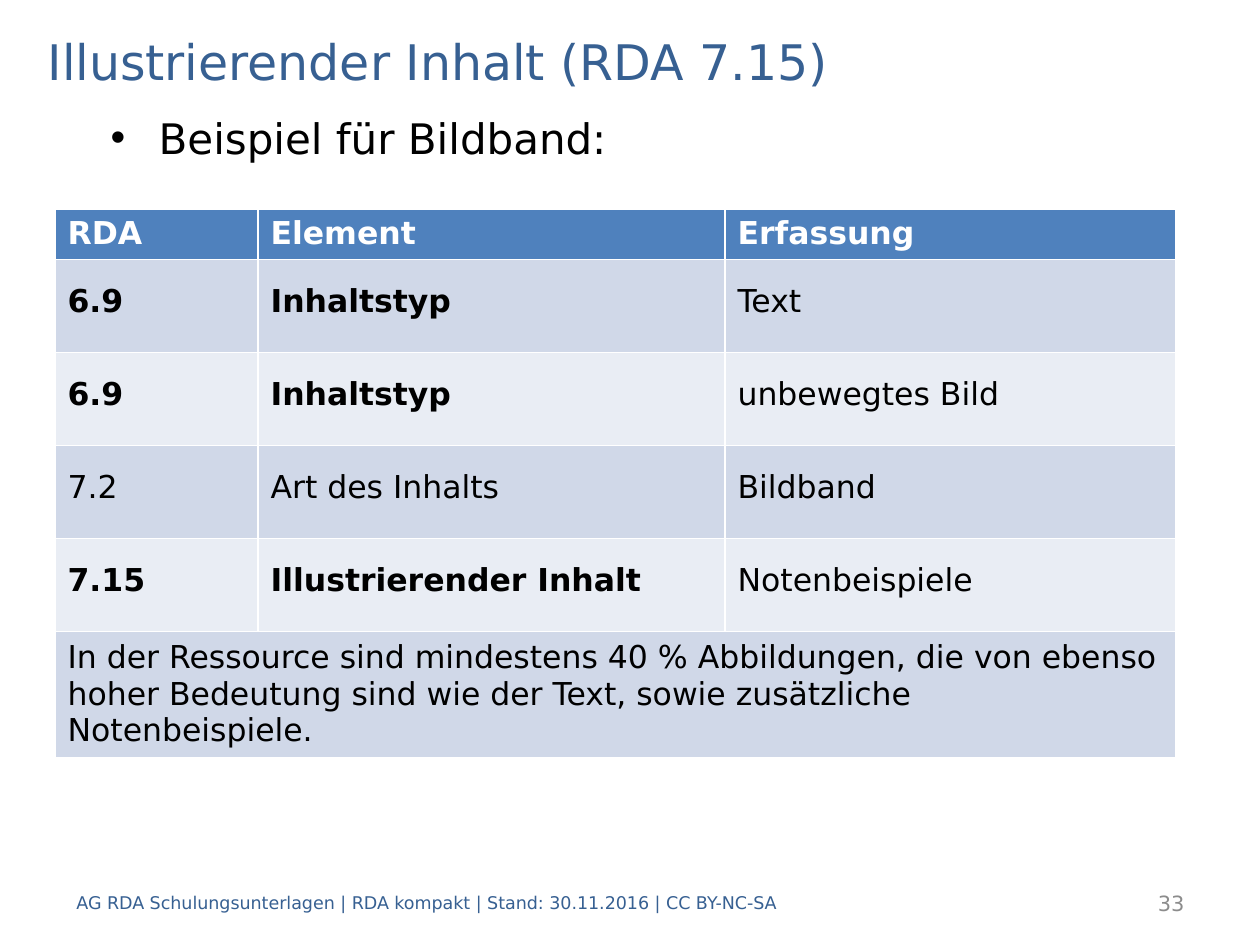
from lxml import etree
from pptx import Presentation
from pptx import util as u
from pptx.dml.color import RGBColor
from pptx.enum import text
from pptx.oxml import ns

PX = 914400 / 126
FONT = "DejaVu Sans"
COLORS = {
    "heading": "376092",
    "text": "000000",
    "number": "8C8C8C",
    "header_text": "FFFFFF",
    "header": "4F81BD",
    "odd_row": "D0D8E8",
    "even_row": "E9EDF4",
}
COLUMN_WIDTHS = [203, 467, 451]
ROW_HEIGHTS = [49, 93, 93, 93, 93, 122]
HEADER = ["RDA", "Element", "Erfassung"]
ENTRIES = [  # number, element, value, core element
    ("6.9", "Inhaltstyp", "Text", True),
    ("6.9", "Inhaltstyp", "unbewegtes Bild", True),
    ("7.2", "Art des Inhalts", "Bildband", False),
    ("7.15", "Illustrierender Inhalt", "Notenbeispiele", True),
]
REMARK = (
    "In der Ressource sind mindestens 40 % Abbildungen, die von ebenso "
    "hoher Bedeutung sind wie der Text, sowie zusätzliche Notenbeispiele."
)


def px(length):
    return u.Emu(round(length * PX))


def place(shape, left, top, width, height):
    shape.left, shape.top = px(left), px(top)
    shape.width, shape.height = px(width), px(height)


def write(frame, content, size, color, bold=False, align=text.PP_ALIGN.LEFT):
    """Set one formatted paragraph and return it."""
    frame.text = content
    paragraph = frame.paragraphs[0]
    paragraph.alignment = align
    font = paragraph.runs[0].font
    font.name, font.size, font.bold = FONT, u.Pt(size), bold
    font.color.rgb = RGBColor.from_string(COLORS[color])
    return paragraph


def add_title(slide, content):
    title = slide.shapes.title
    place(title, 35, 25, 1191, 71)
    title.text_frame.vertical_anchor = text.MSO_ANCHOR.MIDDLE
    write(title.text_frame, content, 28, "heading")


def add_bullet(slide, content):
    body = slide.placeholders[1]
    place(body, 35, 106, 769, 63)
    body.text_frame.auto_size = text.MSO_AUTO_SIZE.SHAPE_TO_FIT_TEXT
    paragraph = write(body.text_frame, content, 24, "text")
    paragraph.level = 1
    paragraph.space_before = u.Pt(0)
    properties = paragraph._p.get_or_add_pPr()
    properties.set("marL", str(px(111)))
    properties.set("indent", str(px(-48)))
    for tag, name, value in (("a:buFont", "typeface", "Arial"), ("a:buChar", "char", "•")):
        etree.SubElement(properties, ns.qn(tag)).set(name, value)


def fill_cell(cell, content, fill, color="text", bold=False):
    cell.fill.solid()
    cell.fill.fore_color.rgb = RGBColor.from_string(COLORS[fill])
    return write(cell.text_frame, content, 18, color, bold)


def fill_body_cell(cell, content, row, bold=False):
    cell.vertical_anchor = text.MSO_ANCHOR.MIDDLE
    fill = "odd_row" if row % 2 else "even_row"
    paragraph = fill_cell(cell, content, fill, bold=bold)
    paragraph.space_before = paragraph.space_after = u.Pt(6)
    return paragraph


def add_element_table(slide):
    frame = slide.shapes.add_table(
        len(ROW_HEIGHTS), len(COLUMN_WIDTHS),
        px(55), px(209), px(sum(COLUMN_WIDTHS)), px(sum(ROW_HEIGHTS)),
    )
    table = frame.table
    for column, width in zip(table.columns, COLUMN_WIDTHS):
        column.width = px(width)
    for row, height in zip(table.rows, ROW_HEIGHTS):
        row.height = px(height)

    for column, heading in enumerate(HEADER):
        fill_cell(table.cell(0, column), heading, "header", "header_text", True)
    for row, (*values, core) in enumerate(ENTRIES, start=1):
        for column, value in enumerate(values):
            bold = core and column < 2
            paragraph = fill_body_cell(table.cell(row, column), value, row, bold)
            paragraph.line_spacing = u.Pt(16)

    last = len(ROW_HEIGHTS) - 1
    remark_cell = table.cell(last, 0)
    remark_cell.merge(table.cell(last, len(COLUMN_WIDTHS) - 1))
    fill_body_cell(remark_cell, REMARK, last)


def add_footer_text(slide, content, left, width, size, color, align):
    box = slide.shapes.add_textbox(px(left), px(878), px(width), px(50))
    box.text_frame.word_wrap = True
    box.text_frame.vertical_anchor = text.MSO_ANCHOR.MIDDLE
    write(box.text_frame, content, size, color, align=align)


def main():
    presentation = Presentation()
    presentation.slide_width, presentation.slide_height = px(1260), px(945)
    slide = presentation.slides.add_slide(presentation.slide_layouts[1])
    add_title(slide, "Illustrierender Inhalt (RDA 7.15)")
    add_element_table(slide)
    add_bullet(slide, "Beispiel für Bildband:")
    add_footer_text(
        slide, "AG RDA Schulungsunterlagen | RDA kompakt | Stand: 30.11.2016 | CC BY-NC-SA",
        64, 1142, 10, "heading", text.PP_ALIGN.LEFT,
    )
    add_footer_text(slide, "33", 997, 200, 12, "number", text.PP_ALIGN.RIGHT)
    presentation.save("out.pptx")


if __name__ == "__main__":
    main()
